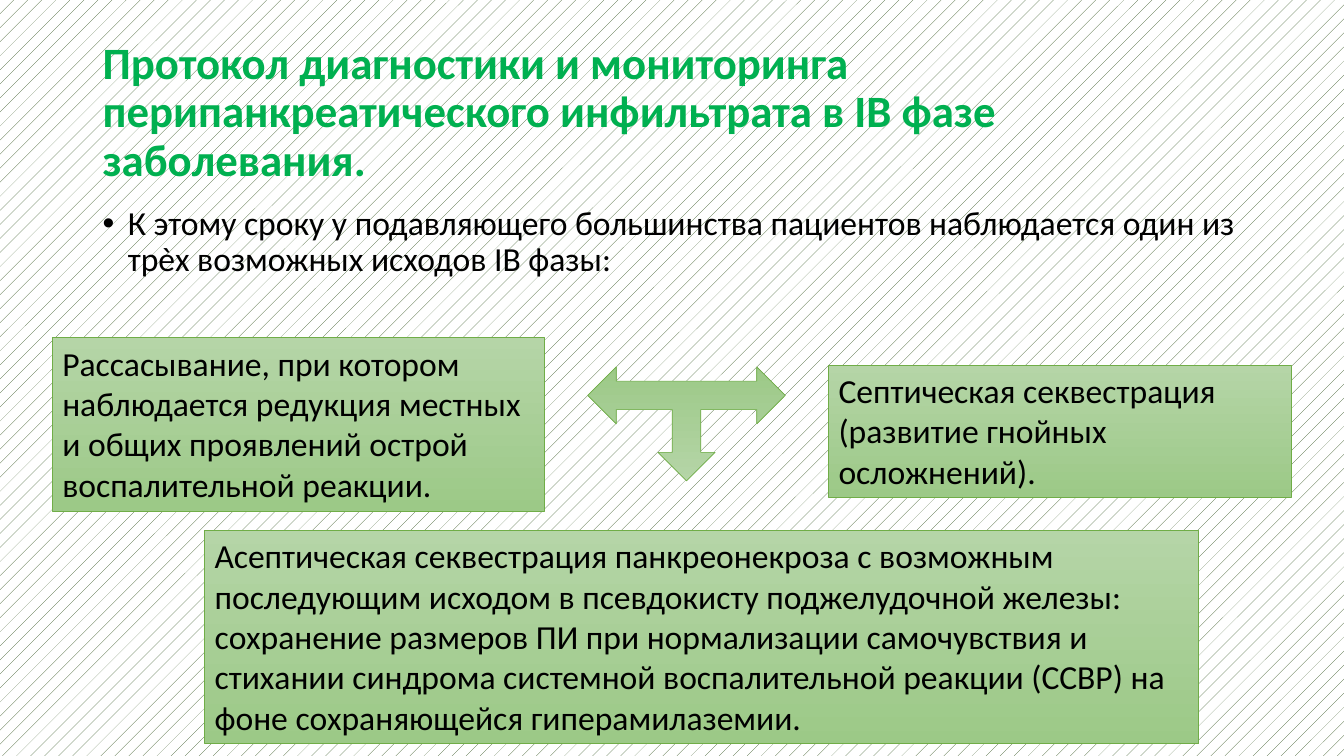
from lxml.etree import SubElement as Sub
from pptx import Presentation
from pptx.dml.color import RGBColor as Rgb
from pptx.enum.dml import MSO_PATTERN as Pat
from pptx.enum.shapes import MSO_SHAPE as Form
from pptx.enum.text import MSO_ANCHOR as Anchor, MSO_AUTO_SIZE as Fit, PP_ALIGN as Align
from pptx.oxml.ns import qn
from pptx.util import Inches, Pt

HUES = {
    "title": "00B050", "text": "000000", "edge": "70AD47",
    "light": "B5D5A7", "deep": "9CC987", "hatch": "385723", "page": "FFFFFF",
}
FONT = "Calibri"

deck = Presentation()
deck.slide_width, deck.slide_height = Inches(13.33), Inches(7.5)
slide = deck.slides.add_slide(deck.slide_layouts[6])
back = slide.background.fill
back.patterned()
back.pattern = Pat.PERCENT_5
back.fore_color.rgb = Rgb.from_string(HUES["hatch"])
back.back_color.rgb = Rgb.from_string(HUES["page"])


def area(left, top, width, height):
    wide, high = deck.slide_width / 100, deck.slide_height / 100
    return int(left * wide), int(top * high), int(width * wide), int(height * high)


def write(shape, words, size=24, hue="text", bold=False, anchor=Anchor.TOP):
    frame = shape.text_frame
    frame.word_wrap = True
    frame.vertical_anchor = anchor
    para = frame.paragraphs[0]
    para.alignment = Align.LEFT
    run = para.add_run()
    run.text = words
    run.font.name, run.font.size, run.font.bold = FONT, Pt(size), bold
    run.font.color.rgb = Rgb.from_string(HUES[hue])
    return para


lead = slide.shapes.add_textbox(*area(6.9, 26.67, 86.25, 23.87))
para = write(lead, "К этому сроку у подавляющего большинства пациентов наблюдается один из трѐх возможных исходов IВ фазы:")
para.line_spacing = 0.9
para.space_before = Pt(10)
props = para._p.get_or_add_pPr()
props.set("marL", str(Inches(0.25)))
props.set("indent", str(-Inches(0.25)))
Sub(props, qn("a:buFont"), typeface="Arial")
Sub(props, qn("a:buChar"), char="•")

title = slide.shapes.add_textbox(*area(6.9, 5.33, 86.25, 19.33))
para = write(title, "Протокол диагностики и мониторинга перипанкреатического инфильтрата в IВ фазе заболевания.",
             32, "title", True, Anchor.MIDDLE)
para.line_spacing = 0.9

PARTS = [
    (Form.RECTANGLE, (3.9, 44.67, 36.6, 22.93),
     "Рассасывание, при котором наблюдается редукция местных и общих проявлений острой воспалительной реакции."),
    (Form.RECTANGLE, (15.23, 70.13, 73.95, 28.27),
     "Асептическая секвестрация панкреонекроза с возможным последующим исходом в псевдокисту "
     "поджелудочной железы: сохранение размеров ПИ при нормализации самочувствия и стихании синдрома "
     "системной воспалительной реакции (ССВР) на фоне сохраняющейся гиперамилаземии."),
    (Form.RECTANGLE, (61.65, 48.27, 34.43, 17.47),
     "Септическая секвестрация (развитие гнойных осложнений)."),
    (Form.LEFT_RIGHT_UP_ARROW, (43.73, 48.53, 14.7, 15.07), None),
]
for form, place, words in PARTS:
    part = slide.shapes.add_shape(form, *area(*place))
    part.shadow.inherit = False
    part.fill.gradient()
    part.fill.gradient_angle = 270
    for stop, hue in zip(part.fill.gradient_stops, ("light", "deep")):
        stop.color.rgb = Rgb.from_string(HUES[hue])
    part.line.color.rgb = Rgb.from_string(HUES["edge"])
    part.line.width = Pt(0.5)
    if words:
        write(part, words)
        part.text_frame.auto_size = Fit.SHAPE_TO_FIT_TEXT
    else:
        part.rotation = 180

deck.save("out.pptx")
